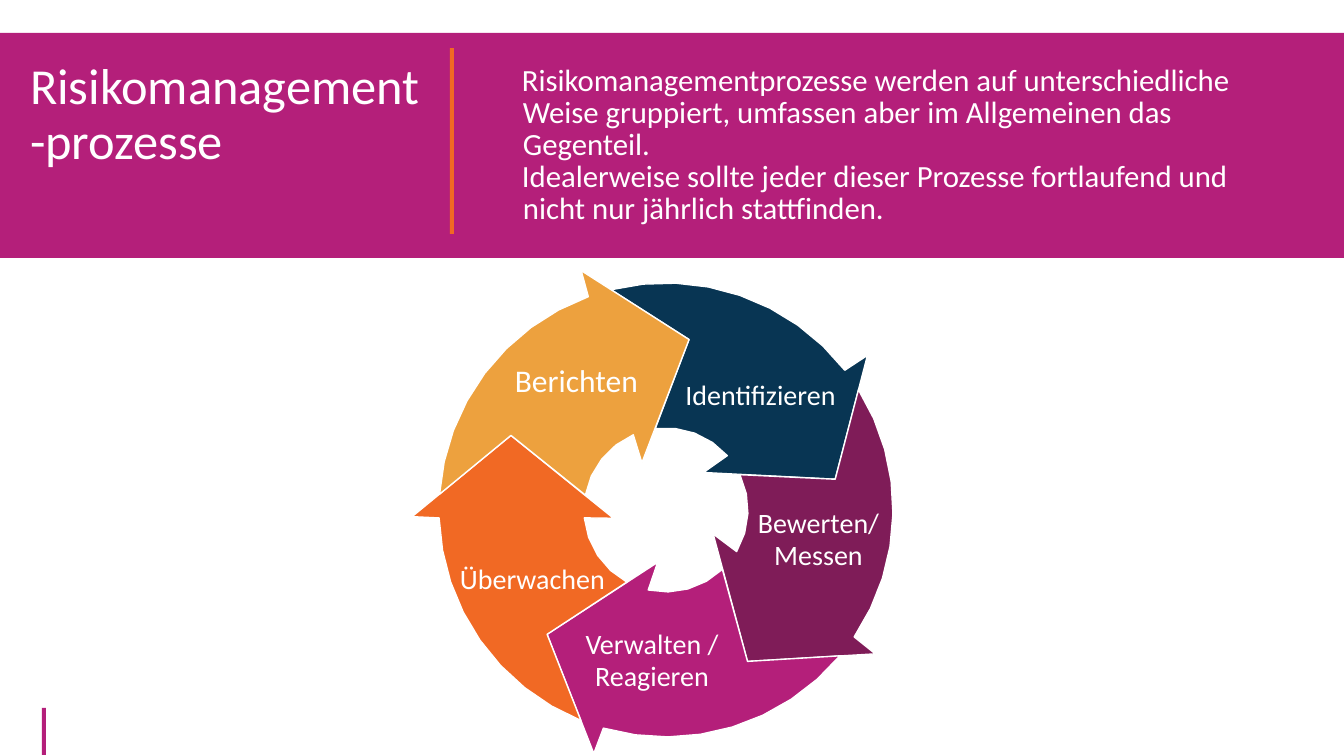
"""Build a slide on the five steps of the risk management cycle."""
from math import cos, radians, sin

from pptx import Presentation
from pptx.dml.color import RGBColor
from pptx.enum.shapes import MSO_SHAPE as Shape
from pptx.enum.text import MSO_ANCHOR as Anchor, MSO_AUTO_SIZE as Fit, PP_ALIGN as Align
from pptx.util import Emu, Pt

SCALE = 914400 / 100.8
FONT = "Calibri"
WHITE = RGBColor(0xFF, 0xFF, 0xFF)
PINK = RGBColor(0xB4, 0x1F, 0x7A)
ORANGE = RGBColor(0xF1, 0x69, 0x24)
NAVY = RGBColor(0x08, 0x35, 0x53)
PLUM = RGBColor(0x7F, 0x1C, 0x58)
GOLD = RGBColor(0xED, 0xA1, 0x3E)

MID_X, MID_Y = 666, 510
OUTER, INNER, TIP, BARB, NOTCH = 227, 82, 172, 254, 53
STEP = 72

STEPS = [
    (NAVY, "Identifizieren", 20, None, (674, 372, 173, 44)),
    (PLUM, "Bewerten/ Messen", 20, 23, (730, 501, 177, 76)),
    (PINK, "Verwalten /\vReagieren", 20, 23, (575, 622, 154, 76)),
    (ORANGE, "Überwachen", 20, None, (449, 556, 167, 44)),
    (GOLD, "Berichten", 22.5, None, (504, 356, 145, 48)),
]
BODY = [
    "Risikomanagementprozesse werden auf unterschiedliche Weise gruppiert, "
    "umfassen aber im Allgemeinen das Gegenteil.",
    "Idealerweise sollte jeder dieser Prozesse fortlaufend und nicht nur "
    "jährlich stattfinden.",
]


def px(num):
    return Emu(round(num * SCALE))


def place(item, left, top, width, height):
    item.left, item.top = px(left), px(top)
    item.width, item.height = px(width), px(height)


def add_bar(slide, box, color):
    bar = slide.shapes.add_shape(Shape.RECTANGLE, *map(px, box))
    bar.shadow.inherit = False
    bar.fill.solid()
    bar.fill.fore_color.rgb = color
    bar.line.fill.background()
    return bar


def style(para, size, align, space=None):
    para.alignment = align
    para.line_spacing = space
    para.space_before = Pt(0)
    for run in para.runs:
        run.font.name = FONT
        run.font.size = Pt(size)
        run.font.color.rgb = WHITE


def add_text(slide, box, lines, size, align, anchor, space=None):
    frame = slide.shapes.add_textbox(*map(px, box)).text_frame
    frame.word_wrap = True
    frame.vertical_anchor = anchor
    frame.text = "\n".join(lines)
    for para in frame.paragraphs:
        style(para, size, align, space and Pt(space))
    return frame


def hang(para, width):
    props = para._p.get_or_add_pPr()
    props.set("marL", str(px(width)))
    props.set("indent", str(-px(width)))


def polar(radius, angle):
    turn = radians(angle)
    return px(MID_X + radius * cos(turn)), px(MID_Y + radius * sin(turn))


def arc(radius, start, end, count):
    return [polar(radius, start + (end - start) * i / count) for i in range(count + 1)]


def add_arrow(slide, turn, color):
    points = [
        *arc(OUTER, turn - 104, turn - 38, 8),
        polar(BARB, turn - 37.5),
        polar(TIP, turn - 10.3),
        polar(NOTCH, turn - 45),
        *arc(INNER, turn - 41.5, turn - 97.5, 4),
        polar(TIP, turn - 10.3 - STEP),
    ]
    form = slide.shapes.build_freeform(*points[0], scale=1.0)
    form.add_line_segments(points[1:], close=True)
    arrow = form.convert_to_shape()
    arrow.shadow.inherit = False
    arrow.fill.solid()
    arrow.fill.fore_color.rgb = color
    arrow.line.color.rgb = WHITE
    arrow.line.width = Pt(1)


def set_title(slide, band):
    title = slide.shapes.title
    band.element.addnext(title.element)
    place(title, 20, 56, 419, 233)
    frame = title.text_frame
    frame.text = "Risikomanagement-prozesse"
    frame.word_wrap = True
    frame.auto_size = Fit.NONE
    frame.vertical_anchor = Anchor.TOP
    style(frame.paragraphs[0], 36, Align.LEFT, 0.9)


def main():
    deck = Presentation()
    deck.slide_width, deck.slide_height = px(1344), px(756)
    slide = deck.slides.add_slide(deck.slide_layouts[5])
    add_bar(slide, (42, 708, 4, 47), PINK)
    band = add_bar(slide, (0, 33, 1344, 225), PINK)
    set_title(slide, band)
    body = add_text(slide, (512, 61, 773, 198), BODY, 22, Align.LEFT, Anchor.TOP, 22.8)
    for para in body.paragraphs:
        hang(para, 1)
    add_bar(slide, (450, 48, 4, 186), ORANGE)
    for i, (color, *_) in enumerate(STEPS):
        add_arrow(slide, i * STEP, color)
    for _, label, size, space, box in STEPS:
        frame = add_text(slide, box, [label], size, Align.CENTER, Anchor.MIDDLE, space)
        frame.word_wrap = "/ " in label
    deck.save("out.pptx")


if __name__ == "__main__":
    main()
